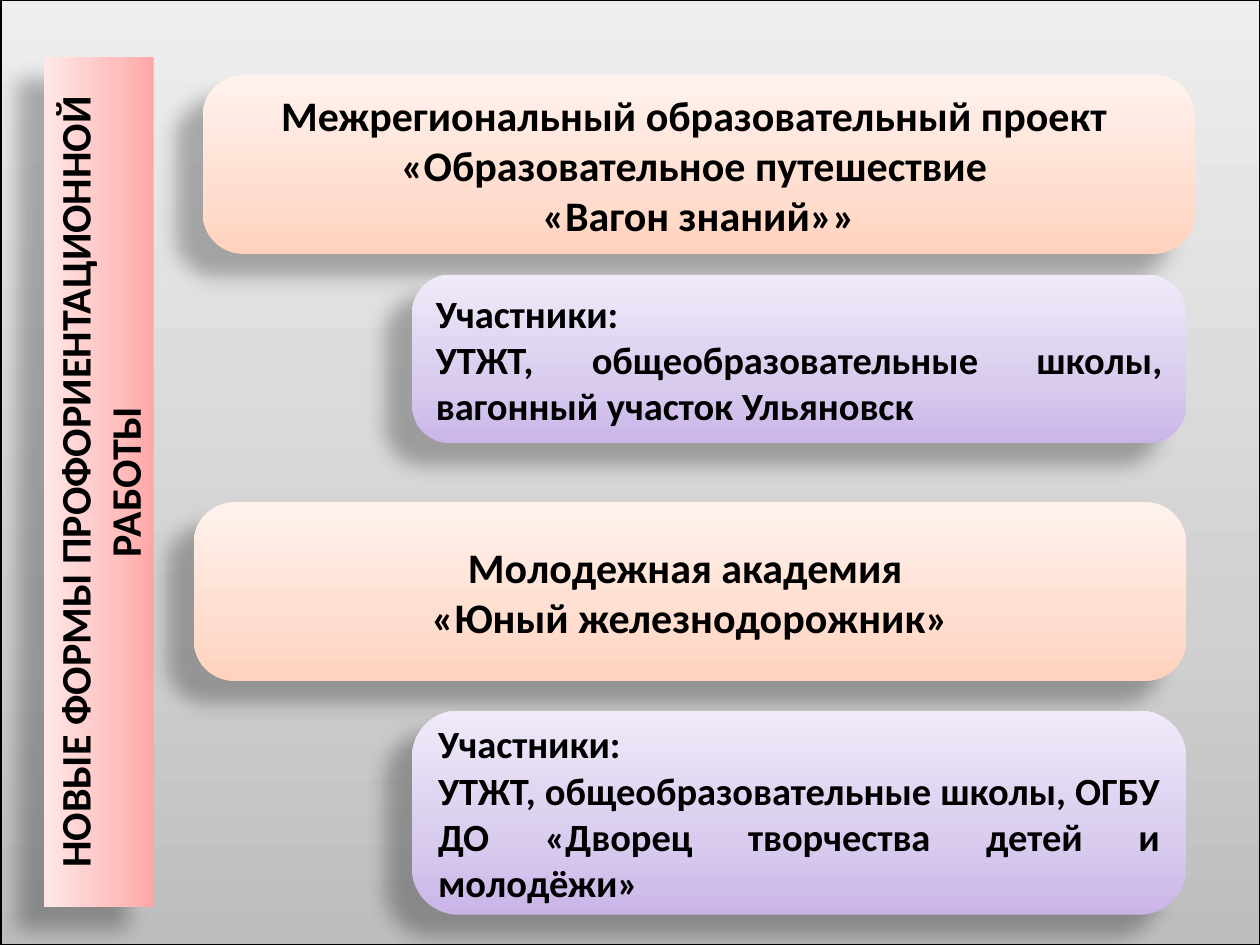
"""Build the slide on new forms of career guidance work."""
from lxml import etree
from pptx import Presentation
from pptx.dml.color import RGBColor
from pptx.enum.shapes import MSO_SHAPE
from pptx.enum.text import MSO_ANCHOR, MSO_AUTO_SIZE, PP_ALIGN
from pptx.oxml.ns import qn
from pptx.util import Cm, Pt

RECT, ROUND = MSO_SHAPE.RECTANGLE, MSO_SHAPE.ROUNDED_RECTANGLE
CENTER, JUSTIFY = PP_ALIGN.CENTER, PP_ALIGN.JUSTIFY
MIDDLE, NO_FIT = MSO_ANCHOR.MIDDLE, MSO_AUTO_SIZE.NONE
TITLE_ONLY = 5

GRAY = ("BDBDBD", "D1D1D1", "EEEEEE")
PEACH = ("FFD2BD", "FFDED0", "FFF2ED")
PINK = ("FFA6A5", "FFC0BF", "FFE7E7")
VIOLET = ("C9B5E8", "D8CBEE", "F0EAF9")
STOPS = (0, 35, 100)
SOFT = dict(alpha=38, blur=3.1, dist=1.6, angle=90)
DEEP = dict(alpha=28, blur=11.8, dist=19.7, angle=141)

PROJECT = dict(colors=PEACH, size=24, align=CENTER)
MEMBERS = dict(colors=VIOLET, size=22, align=JUSTIFY)
CARDS = [
    (PROJECT, (4.09, 1.52, 20, 3.6),
     ["Межрегиональный образовательный проект ",
      "«Образовательное путешествие ", "«Вагон знаний»»"]),
    (PROJECT, (3.91, 10.13, 20, 3.6),
     ["Молодежная академия ", "«Юный железнодорожник»"]),
    (MEMBERS, (8.31, 5.54, 15.6, 3.4),
     ["Участники: ",
      "УТЖТ, общеобразовательные школы, вагонный участок Ульяновск"]),
    (MEMBERS, (8.31, 14.33, 15.6, 4.11),
     ["Участники: ",
      "УТЖТ, общеобразовательные школы, ОГБУ ДО «Дворец творчества детей и молодёжи»"]),
]


def rgb(value):
    return RGBColor.from_string(value)


def child(parent, tag, **attrs):
    return etree.SubElement(parent, qn(tag), {k: str(v) for k, v in attrs.items()})


class Deck:
    def __init__(self, prs, font):
        self.prs, self.font = prs, font
        self.s = prs.slides.add_slide(prs.slide_layouts[TITLE_ONLY])

    def paint(self, sp, colors, shadow, line=None):
        pr = sp._element.spPr
        grad = child(pr, "a:gradFill", rotWithShape=1)
        stops = child(grad, "a:gsLst")
        for pos, color in zip(STOPS, colors):
            child(child(stops, "a:gs", pos=pos * 1000), "a:srgbClr", val=color)
        child(grad, "a:lin", ang=270 * 60000, scaled=1)
        if line:
            sp.line.color.rgb = rgb(line)
            sp.line.width = Pt(0.75)
        else:
            sp.line.fill.background()
        outer = child(child(pr, "a:effectLst"), "a:outerShdw",
                      blurRad=Pt(shadow["blur"]), dist=Pt(shadow["dist"]),
                      dir=shadow["angle"] * 60000, rotWithShape=0)
        color = child(outer, "a:srgbClr", val="000000")
        child(color, "a:alpha", val=shadow["alpha"] * 1000)

    def add_lines(self, sp, lines, size, align):
        tf = sp.text_frame
        frame = dict(word_wrap=True, auto_size=NO_FIT, vertical_anchor=MIDDLE)
        for name, value in frame.items():
            setattr(tf, name, value)
        for i, line in enumerate(lines):
            p = tf.add_paragraph() if i else tf.paragraphs[0]
            p.alignment = align
            r = p.add_run()
            r.text = line
            for name, value in dict(name=self.font, size=Pt(size), bold=True).items():
                setattr(r.font, name, value)
            r.font.color.rgb = rgb("000000")

    def backdrop(self, box):
        sp = self.s.shapes.add_shape(RECT, *map(Cm, box))
        self.paint(sp, GRAY, SOFT, "000000")

    def card(self, box, lines, colors, size, align):
        sp = self.s.shapes.add_shape(ROUND, *map(Cm, box))
        sp.adjustments[0] = 0.227
        self.paint(sp, colors, DEEP)
        self.add_lines(sp, lines, size, align)

    def title(self, box, text):
        sp = self.s.shapes.title
        for name, value in zip(("left", "top", "width", "height"), box):
            setattr(sp, name, Cm(value))
        sp.rotation = 270
        child(child(sp._element.spPr, "a:prstGeom", prst="roundRect"), "a:avLst")
        self.paint(sp, PINK, DEEP)
        self.add_lines(sp, [text], 24, CENTER)
        self.s.shapes._spTree.append(sp._element)


def main():
    prs = Presentation()
    prs.slide_width, prs.slide_height = Cm(25.4), Cm(19.05)
    deck = Deck(prs, "Calibri")
    deck.backdrop((0.02, 0, 25.37, 19.05))
    deck.title((-6.58, 8.61, 17.15, 2.21), "НОВЫЕ ФОРМЫ ПРОФОРИЕНТАЦИОННОЙ РАБОТЫ")
    for style, box, lines in CARDS:
        deck.card(box, lines, **style)
    prs.save("out.pptx")


if __name__ == "__main__":
    main()
